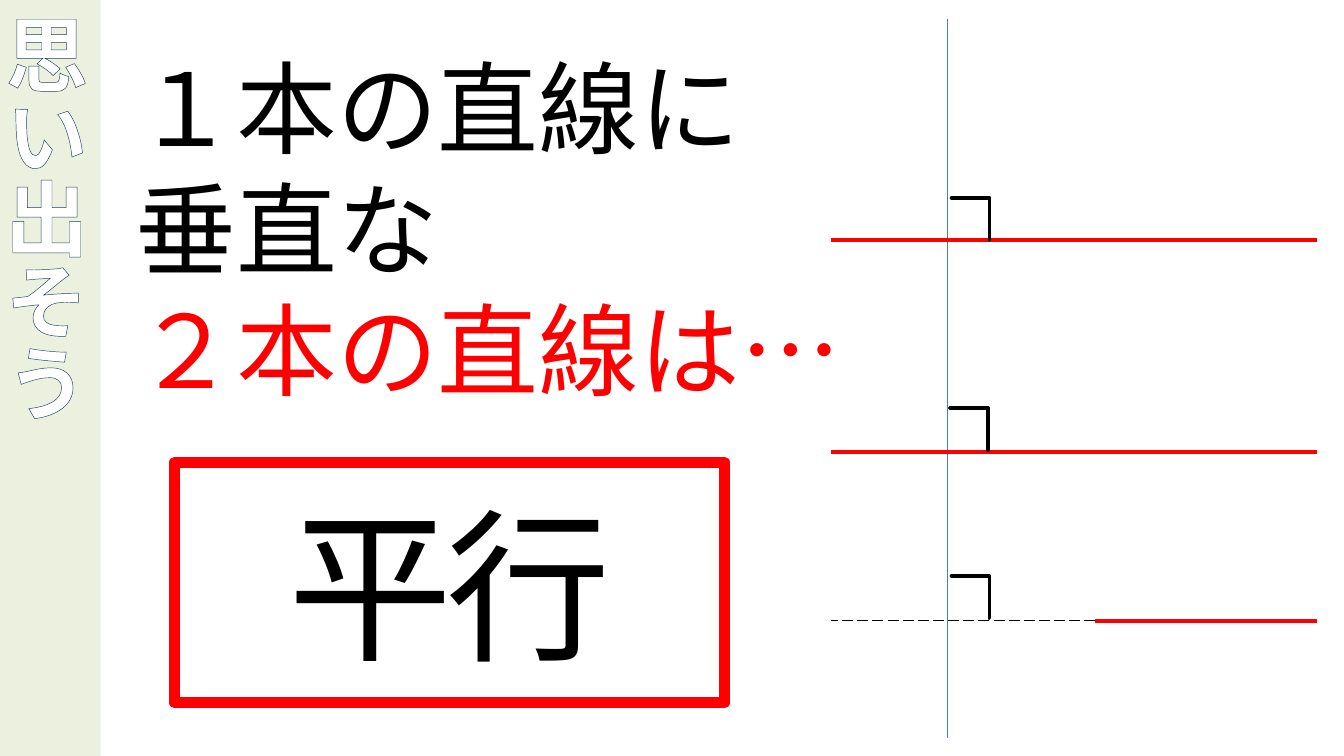
from pptx import Presentation
from pptx.dml.color import RGBColor
from pptx.enum.dml import MSO_LINE as Dash
from pptx.enum.shapes import MSO_CONNECTOR as Conn, MSO_SHAPE as Shape
from pptx.enum.text import MSO_ANCHOR as Anchor, MSO_AUTO_SIZE as Auto, PP_ALIGN as Align
from pptx.oxml import parse_xml
from pptx.oxml.ns import nsdecls, qn
from pptx.util import Pt

FONT = "Noto Sans CJK JP"
COLORS = {"band": "EBF1DE", "white": "FFFFFF", "outline": "254061",
          "black": "000000", "red": "FF0000", "blue": "4B7EBC"}

BANNER = "思い出そう"
STATEMENT = [("１本の直線に", "black"), ("垂直な", "black"), ("２本の直線は…", "red")]
ANSWER = "平行"

LEFT, SPLIT, RIGHT = 445, 586.8, 705.6
CROSS = 507.6
LINES = [
    ((CROSS, 10.1), (CROSS, 395.3), "blue", 0.75, None),
    ((LEFT, 128.7), (RIGHT, 128.7), "red", 2.25, None),
    ((LEFT, 242), (RIGHT, 242), "red", 2.25, None),
    ((SPLIT, 332.6), (RIGHT, 332.6), "red", 2.25, None),
    ((SPLIT, 332.6), (LEFT, 332.6), "black", 0.75, Dash.LONG_DASH),
]
ANGLE_MARKS = [(508.6, 107.1), (507.8, 219.7), (508.6, 309.7)]
MARK_SIZE = (22.6, 20.3)


def rgb(name):
    return RGBColor.from_string(COLORS[name])


def apply(obj, values):
    for name, value in values.items():
        setattr(obj, name, value)


def style_line(line, color, width, dash=None):
    line.color.rgb = rgb(color)
    apply(line, {"width": Pt(width), "dash_style": dash})


def add_box(shapes, kind, box, fill=None, line=None, width=1):
    sp = shapes.add_shape(kind, *map(Pt, box))
    sp.shadow.inherit = False
    if fill:
        sp.fill.solid()
        sp.fill.fore_color.rgb = rgb(fill)
    else:
        sp.fill.background()
    if line:
        style_line(sp.line, line, width)
    else:
        sp.line.fill.background()
    return sp


def add_run(p, text, size, color, bold=False):
    r = p.add_run()
    r.text = text
    apply(r.font, {"size": Pt(size), "name": FONT, "bold": bold})
    r.font.color.rgb = rgb(color)
    r._r.get_or_add_rPr().append(parse_xml(f'<a:ea {nsdecls("a")} typeface="{FONT}"/>'))
    return r


def add_banner(shapes):
    sp = add_box(shapes, Shape.RECTANGLE, (-2.9, 0, 56.9, 406.8), "band")
    tf = sp.text_frame
    apply(tf, {"word_wrap": True, "auto_size": Auto.SHAPE_TO_FIT_TEXT,
               "vertical_anchor": Anchor.BOTTOM, "margin_left": 0,
               "margin_right": Pt(5.8), "margin_top": Pt(3.6), "margin_bottom": Pt(3.6)})
    tf._txBody.find(qn("a:bodyPr")).set("vert", "eaVert")
    p = tf.paragraphs[0]
    apply(p, {"alignment": Align.CENTER, "line_spacing": Pt(50)})
    r = add_run(p, BANNER, 44, "white", True)
    r._r.get_or_add_rPr().insert(0, parse_xml(
        f'<a:ln {nsdecls("a")} w="{Pt(0.75)}"><a:solidFill>'
        f'<a:srgbClr val="{COLORS["outline"]}"/></a:solidFill></a:ln>'))


def add_statement(shapes):
    tf = shapes.add_textbox(*map(Pt, (65.5, 20.9, 425.5, 203.8))).text_frame
    apply(tf, {"word_wrap": True, "auto_size": Auto.SHAPE_TO_FIT_TEXT})
    for i, (text, color) in enumerate(STATEMENT):
        p = tf.add_paragraph() if i else tf.paragraphs[0]
        add_run(p, text, 54, color)


def add_answer(shapes):
    sp = add_box(shapes, Shape.RECTANGLE, (93.6, 247.7, 294.5, 128.9), None, "red", 6)
    tf = sp.text_frame
    apply(tf, {"word_wrap": False, "vertical_anchor": Anchor.MIDDLE})
    p = tf.paragraphs[0]
    p.alignment = Align.CENTER
    r = add_run(p, ANSWER, 88, "black")
    r._r.get_or_add_rPr().set("spc", "-300")


def add_diagram(shapes):
    for start, end, color, width, dash in LINES:
        line = shapes.add_connector(Conn.STRAIGHT, *map(Pt, start + end))
        style_line(line.line, color, width, dash)
        line._element.spPr.append(parse_xml(f'<a:effectLst {nsdecls("a")}/>'))
    for corner in ANGLE_MARKS:
        sp = add_box(shapes, Shape.HALF_FRAME, corner + MARK_SIZE, "black", "black", 2)
        sp.rotation = 90
        for i in range(2):
            sp.adjustments[i] = 0


prs = Presentation()
apply(prs, {"slide_width": Pt(720), "slide_height": Pt(405)})
shapes = prs.slides.add_slide(prs.slide_layouts[6]).shapes
for add_part in (add_banner, add_statement, add_answer, add_diagram):
    add_part(shapes)
prs.save("out.pptx")
